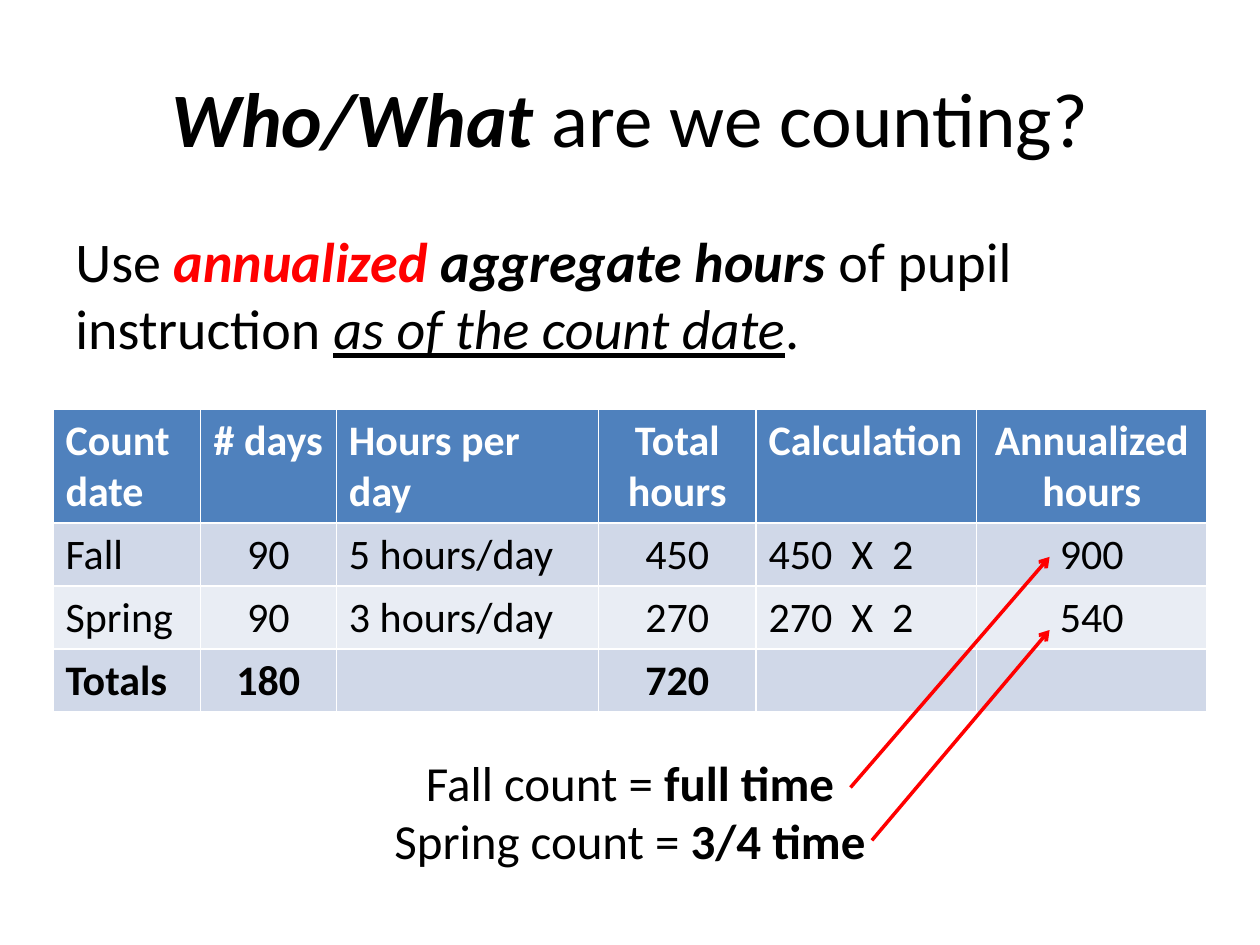
import pptx
import pptx.util
import pptx.dml.color
import pptx.enum.text
import pptx.enum.shapes
import pptx.oxml
import pptx.oxml.ns

Inches = pptx.util.Inches
Pt = pptx.util.Pt
ALIGN = pptx.enum.text.PP_ALIGN
ANCHOR = pptx.enum.text.MSO_ANCHOR

FONT = "Calibri"
BLACK, WHITE, RED = "000000", "FFFFFF", "FF0000"
HEADER_FILL, BAND_FILLS = "4F81BD", ("D0D8E8", "E9EDF4")

# Content: a paragraph is a list of (text, style letters), b/i/u plus r for red
TITLE = [[("Who/What", "bi"), (" are we counting?", "")]]
BODY = [[("Use ", ""), ("annualized", "bir"), (" aggregate hours ", "bi"),
         ("of pupil instruction ", ""), ("as of the count date", "iu"), (".", "")]]
SUMMARY = [[("Fall count = ", ""), ("full time", "b")],
           [("Spring count = ", ""), ("3/4 time", "b")]]
ROWS = [
    ("Count date", "# days", "Hours per day", "Total hours", "Calculation", "Annualized hours"),
    ("Fall", "90", "5 hours/day", "450", "450  X  2", "900"),
    ("Spring", "90", "3 hours/day", "270", "270  X  2", "540"),
    ("Totals", "180", "", "720", "", ""),
]
COLUMN_WIDTHS = (1.17, 1.08, 2.08, 1.25, 1.75, 1.83)
ROW_HEIGHTS = (0.9, 0.5, 0.5, 0.5)
ARROWS = [((6.75, 6.25), (8.33, 4.42)), ((6.92, 6.67), (8.33, 5))]


def rgb(value):
    return pptx.dml.color.RGBColor.from_string(value)


def style_span(span, size, color, style=""):
    font = span.font
    font.name, font.size = FONT, Pt(size)
    font.bold, font.italic, font.underline = (letter in style for letter in "biu")
    font.color.rgb = rgb(RED if "r" in style else color)


def add_text(page, place, paragraphs, size, align=ALIGN.CENTER, anchor=ANCHOR.TOP):
    box = page.shapes.add_textbox(*map(Inches, place))
    frame = box.text_frame
    frame.word_wrap = True
    frame.vertical_anchor = anchor
    frame.text = "\n".join("" for _ in paragraphs)
    for para, spans in zip(frame.paragraphs, paragraphs):
        para.alignment = align
        for text, style in spans:
            span = para.add_run()
            span.text = text
            style_span(span, size, BLACK, style)


def add_hours_table(page):
    frame = page.shapes.add_table(len(ROWS), len(COLUMN_WIDTHS), Inches(0.42), Inches(3.25),
                                  Inches(sum(COLUMN_WIDTHS)), Inches(sum(ROW_HEIGHTS)))
    table = frame.table
    for column, width in zip(table.columns, COLUMN_WIDTHS):
        column.width = Inches(width)
    for r, (texts, height) in enumerate(zip(ROWS, ROW_HEIGHTS)):
        table.rows[r].height = Inches(height)
        header = r == 0
        bold = "b" if header or texts[0] == "Totals" else ""
        for c, text in enumerate(texts):
            cell = table.cell(r, c)
            cell.fill.solid()
            cell.fill.fore_color.rgb = rgb(HEADER_FILL if header else BAND_FILLS[(r - 1) % 2])
            cell.text_frame.text = text
            para = cell.text_frame.paragraphs[0]
            # Every second column is centred
            para.alignment = ALIGN.CENTER if c % 2 else ALIGN.LEFT
            for span in para.runs:
                style_span(span, 24, WHITE if header else BLACK, bold)


def add_arrow(page, start, end):
    arrow = page.shapes.add_connector(pptx.enum.shapes.MSO_CONNECTOR.STRAIGHT,
                                      *map(Inches, start + end))
    arrow.line.color.rgb = rgb(RED)
    arrow.line.width = Pt(2)
    properties = arrow.line._get_or_add_ln()
    head = pptx.oxml.parse_xml(
        f'<a:tailEnd {pptx.oxml.ns.nsdecls("a")} type="arrow"/>')
    properties.append(head)
    # An empty effect list removes the shadow
    arrow._element.spPr.append(
        pptx.oxml.parse_xml(f'<a:effectLst {pptx.oxml.ns.nsdecls("a")}/>'))


def main():
    deck = pptx.Presentation()
    deck.slide_width, deck.slide_height = Inches(10), Inches(7.5)
    page = deck.slides.add_slide(deck.slide_layouts[6])

    # Title and statement
    add_text(page, (0.5, 0.3, 9, 1.25), TITLE, 44, anchor=ANCHOR.MIDDLE)
    add_text(page, (0.5, 1.75, 9, 1.33), BODY, 32, align=ALIGN.LEFT)

    # Hours, with the result of each count below
    add_hours_table(page)
    add_text(page, (2.75, 5.92, 4.5, 1.04), SUMMARY, 28)
    for start, end in ARROWS:
        add_arrow(page, start, end)

    deck.save("out.pptx")


if __name__ == "__main__":
    main()
